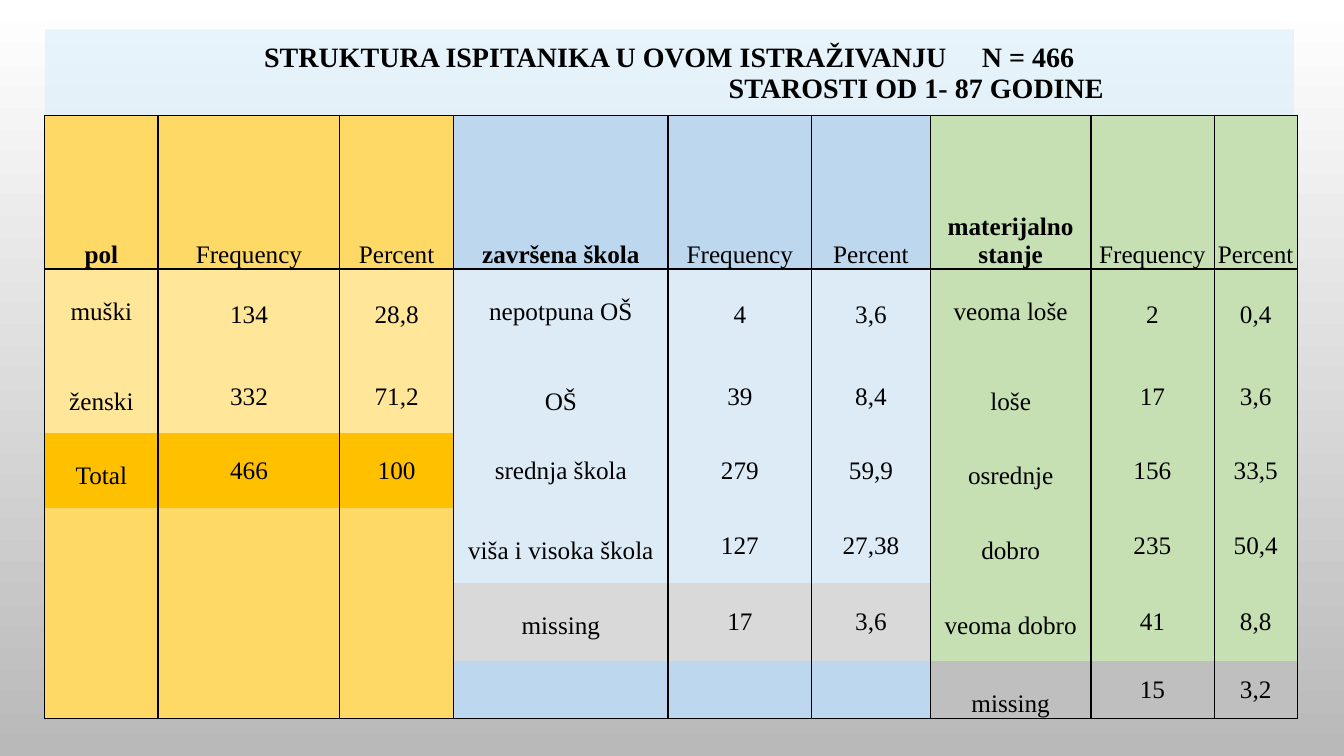
"""Build a slide with a table of the respondents' sex, schooling and material status."""
from lxml.etree import SubElement
from pptx import Presentation
from pptx.dml.color import RGBColor
from pptx.enum.text import MSO_ANCHOR, MSO_AUTO_SIZE, PP_ALIGN
from pptx.oxml.ns import qn
from pptx.util import Cm, Pt

FONT = "Times New Roman"
BLACK = "000000"
GOLD, PALE_GOLD, ORANGE = "FFD966", "FFE699", "FFC000"
BLUE, PALE_BLUE, GREEN = "BDD7EE", "DDEBF7", "C6E0B4"
LIGHT_GREY, GREY = "D9D9D9", "BFBFBF"

TITLE_LINES = [
    ("\tSTRUKTURA ISPITANIKA U OVOM ISTRAŽIVANJU\tN = 466", [5.26, 23.35]),
    ("\tSTAROSTI OD 1- 87 GODINE", [16.97]),
]
GROUPS = [
    [
        (GOLD, "pol", "Frequency", "Percent"),
        (PALE_GOLD, "muški", "134", "28,8"),
        (PALE_GOLD, "ženski", "332", "71,2"),
        (ORANGE, "Total", "466", "100"),
        (GOLD, "", "", ""),
        (GOLD, "", "", ""),
        (GOLD, "", "", ""),
    ],
    [
        (BLUE, "završena škola", "Frequency", "Percent"),
        (PALE_BLUE, "nepotpuna OŠ", "4", "3,6"),
        (PALE_BLUE, "OŠ", "39", "8,4"),
        (PALE_BLUE, "srednja škola", "279", "59,9"),
        (PALE_BLUE, "viša i visoka škola", "127", "27,38"),
        (LIGHT_GREY, "missing", "17", "3,6"),
        (BLUE, "", "", ""),
    ],
    [
        (GREEN, "materijalno stanje", "Frequency", "Percent"),
        (GREEN, "veoma loše", "2", "0,4"),
        (GREEN, "loše", "17", "3,6"),
        (GREEN, "osrednje", "156", "33,5"),
        (GREEN, "dobro", "235", "50,4"),
        (GREEN, "veoma dobro", "41", "8,8"),
        (GREY, "missing", "15", "3,2"),
    ],
]
SINGLE_SPACED_LABEL = "srednja škola"
COLUMN_WIDTHS = [2.87, 4.57, 2.87, 5.41, 3.61, 3, 4.04, 3.1, 2.11]
ROW_HEIGHTS = [3.86, 2.26, 1.88, 1.88, 1.88, 1.98, 1.04]
SIDE_BORDERS = [(1, 1.5), (1.5, 0.5), (0.5, 1)]
TOP_BORDERS = {0: 1, 1: 1.5}
BOTTOM_BORDERS = {0: 1.5, len(ROW_HEIGHTS) - 1: 1}


def color(value):
    return RGBColor.from_string(value)


def set_font(paragraph, size, bold):
    font = paragraph.font
    font.name, font.size, font.bold = FONT, Pt(size), bold
    font.color.rgb = color(BLACK)


def set_background(page):
    fill = page.background.fill
    fill.gradient()
    fill.gradient_angle = 270
    for stop, shade in zip(fill.gradient_stops, ("FFFFFF", "B9B9B9")):
        stop.color.rgb = color(shade)


def add_title(page):
    box = page.shapes.title
    box.left, box.top, box.width, box.height = Cm(1.14), Cm(0.74), Cm(31.47), Cm(2.24)
    box.fill.solid()
    box.fill.fore_color.rgb = color("D5EDFC")
    shade = box.fill._xPr.find(qn("a:solidFill")).find(qn("a:srgbClr"))
    SubElement(shade, qn("a:alpha"), val="51000")
    frame = box.text_frame
    frame.auto_size = MSO_AUTO_SIZE.NONE
    frame.vertical_anchor = MSO_ANCHOR.MIDDLE
    for index, (line, stops) in enumerate(TITLE_LINES):
        para = frame.add_paragraph() if index else frame.paragraphs[0]
        para.add_run().text = line
        para.alignment = PP_ALIGN.LEFT
        para.line_spacing = 0.9
        para.space_before = Pt(0)
        tabs = SubElement(para._p.get_or_add_pPr(), qn("a:tabLst"))
        for stop in stops:
            SubElement(tabs, qn("a:tab"), pos=str(Cm(stop)), algn="l")
        set_font(para, 20, True)


def set_borders(cell, row, part):
    left, right = SIDE_BORDERS[part]
    widths = {"L": left, "R": right, "T": TOP_BORDERS.get(row), "B": BOTTOM_BORDERS.get(row)}
    properties = cell._tc.get_or_add_tcPr()
    for side, width in widths.items():
        line = SubElement(properties, qn(f"a:ln{side}"), w=str(Pt(width or 0)))
        if width:
            SubElement(SubElement(line, qn("a:solidFill")), qn("a:srgbClr"), val=BLACK)
        else:
            SubElement(line, qn("a:noFill"))


def fill_cell(cell, text, shade, row, part):
    set_borders(cell, row, part)
    cell.fill.solid()
    cell.fill.fore_color.rgb = color(shade)
    cell.margin_left = cell.margin_right = cell.margin_top = Cm(0.03)
    cell.margin_bottom = 0
    para = cell.text_frame.paragraphs[0]
    para.text = text
    para.alignment = PP_ALIGN.CENTER
    set_font(para, 18, row == 0 and part == 0)
    if row == 0:
        cell.vertical_anchor = MSO_ANCHOR.BOTTOM
    elif part == 0 and text and text != SINGLE_SPACED_LABEL:
        cell.vertical_anchor = MSO_ANCHOR.TOP
        para.line_spacing = 2.0
    else:
        cell.vertical_anchor = MSO_ANCHOR.MIDDLE


def add_respondent_table(page):
    table = page.shapes.add_table(
        len(ROW_HEIGHTS), len(COLUMN_WIDTHS), Cm(1.12), Cm(2.92),
        Cm(sum(COLUMN_WIDTHS)), Cm(sum(ROW_HEIGHTS))).table
    table.first_row = table.horz_banding = False
    for column, width in zip(table.columns, COLUMN_WIDTHS):
        column.width = Cm(width)
    for row, height in zip(table.rows, ROW_HEIGHTS):
        row.height = Cm(height)
    for group_index, group in enumerate(GROUPS):
        for row, (shade, *texts) in enumerate(group):
            for part, text in enumerate(texts):
                cell = table.cell(row, group_index * len(texts) + part)
                fill_cell(cell, text, shade, row, part)


def main():
    deck = Presentation()
    deck.slide_width, deck.slide_height = Cm(33.87), Cm(19.05)
    page = deck.slides.add_slide(deck.slide_layouts[5])
    set_background(page)
    add_title(page)
    add_respondent_table(page)
    deck.save("out.pptx")


if __name__ == "__main__":
    main()
